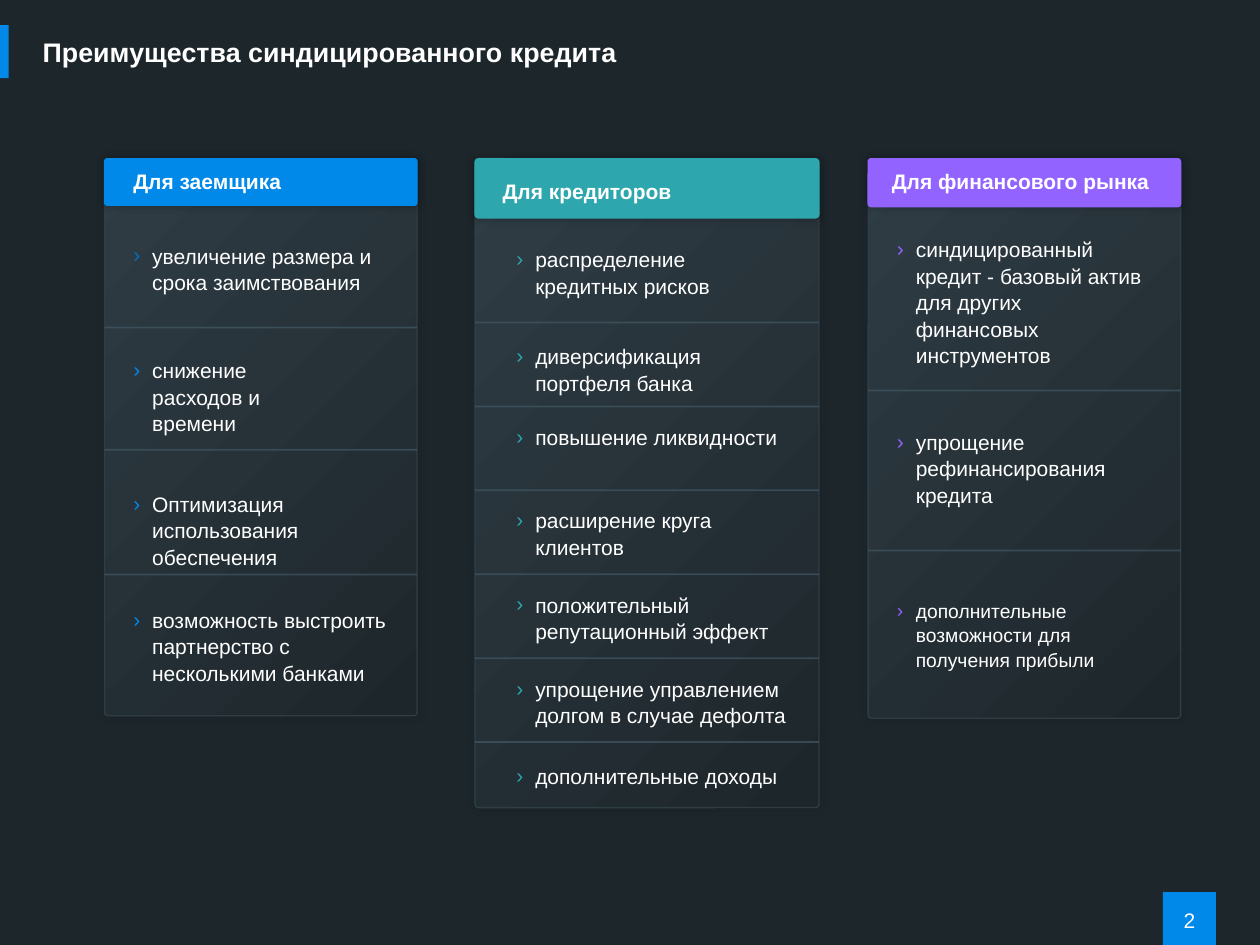
from lxml import etree
from pptx import Presentation
from pptx.dml.color import RGBColor
from pptx.enum.shapes import MSO_CONNECTOR as Connector, MSO_SHAPE as Shape
from pptx.enum.text import MSO_ANCHOR as Anchor, PP_ALIGN as Align
from pptx.oxml.ns import qn
from pptx.util import Inches, Pt

NIGHT = RGBColor(0x1D, 0x26, 0x2B)
SLATE = RGBColor(0x2F, 0x3D, 0x45)
STEEL = RGBColor(0x49, 0x60, 0x6C)
WHITE = RGBColor(0xFF, 0xFF, 0xFF)
BLUE = RGBColor(0x00, 0x89, 0xE9)
DEEP_BLUE = RGBColor(0x00, 0x70, 0xC0)
TEAL = RGBColor(0x2D, 0xA7, 0xAD)
VIOLET = RGBColor(0x92, 0x63, 0xFF)
COLUMNS, ROWS = 100, 75

BORROWER = [
    (18.7, 5, 22.3, DEEP_BLUE, 12, "увеличение размера и срока заимствования"),
    (27.8, 7.1, 16.9, BLUE, 12, "снижение расходов и времени"),
    (38.4, 7.1, 22.3, BLUE, 12, "Оптимизация использования обеспечения"),
    (47.6, 7.1, 22.3, BLUE, 12,
     "возможность выстроить партнерство с несколькими банками"),
]
LENDERS = [
    (top, 5, 23.6, TEAL, 12, text) for top, text in [
        (19, "распределение кредитных рисков"),
        (26.7, "диверсификация портфеля банка"),
        (33.1, "повышение ликвидности"),
        (39.7, "расширение круга клиентов"),
        (46.4, "положительный репутационный эффект"),
        (53.1, "упрощение управлением долгом в случае дефолта"),
        (60, "дополнительные доходы"),
    ]
]
MARKET = [
    (18.2, 11.1, 21.5, VIOLET, 12,
     "синдицированный кредит - базовый актив для других финансовых инструментов"),
    (33.5, 7.1, 21.5, VIOLET, 12, "упрощение рефинансирования кредита"),
    (47, 6.6, 21.5, VIOLET, 11, "дополнительные возможности для получения прибыли"),
]


def write(frame, text, size=12, bold=False, align=Align.LEFT, bullet=None, spacing=1.0):
    """Fill a text frame with one formatted paragraph."""
    paragraph = frame.paragraphs[0]
    paragraph.text = text
    paragraph.alignment = align
    paragraph.line_spacing = spacing
    if bullet is not None:
        properties = paragraph._p.get_or_add_pPr()
        properties.set("marL", str(Inches(0.15)))
        properties.set("indent", str(-Inches(0.15)))
        colour = etree.SubElement(properties, qn("a:buClr"))
        etree.SubElement(colour, qn("a:srgbClr"), val=str(bullet))
        etree.SubElement(properties, qn("a:buFont"), typeface="Arial")
        etree.SubElement(properties, qn("a:buChar"), char="›")
    font = paragraph.runs[0].font
    font.name, font.size, font.bold = "Arial", Pt(size), bold
    font.color.rgb = WHITE


class Deck:
    """Holds the slide style and draws each kind of element on the grid."""

    def __init__(self):
        self.presentation = Presentation()
        self.presentation.slide_width = Inches(10)
        self.presentation.slide_height = Inches(7.5)
        self.column = self.presentation.slide_width / COLUMNS
        self.row = self.presentation.slide_height / ROWS
        self.slide = self.presentation.slides.add_slide(self.presentation.slide_layouts[6])
        self.slide.background.fill.solid()
        self.slide.background.fill.fore_color.rgb = NIGHT

    def place(self, left, top, width, height):
        return (round(left * self.column), round(top * self.row),
                round(width * self.column), round(height * self.row))

    def block(self, area, colour):
        block = self.slide.shapes.add_shape(Shape.RECTANGLE, *self.place(*area))
        block.shadow.inherit = False
        block.fill.solid()
        block.fill.fore_color.rgb = colour
        block.line.fill.background()

    def card(self, area, corner, shade, colour=None):
        card = self.slide.shapes.add_shape(Shape.ROUNDED_RECTANGLE, *self.place(*area))
        card.adjustments[0] = corner
        if colour is None:
            card.fill.gradient()
            card.fill.gradient_angle = 315
            for stop, tone in zip(card.fill.gradient_stops, (SLATE, NIGHT)):
                stop.color.rgb = tone
        else:
            card.fill.solid()
            card.fill.fore_color.rgb = colour
        card.line.color.rgb = colour or SLATE
        card.line.width = Pt(0.75)
        card.shadow.inherit = False
        effects = card._element.spPr.find(qn("a:effectLst"))
        shadow = etree.SubElement(effects, qn("a:outerShdw"), blurRad=str(Pt(5)),
                                  dist="0", dir="0", algn="ctr", rotWithShape="0")
        black = etree.SubElement(shadow, qn("a:srgbClr"), val="000000")
        etree.SubElement(black, qn("a:alpha"), val=str(shade * 1000))

    def divider(self, left, top, width):
        x, y, length, _ = self.place(left, top, width, 0)
        divider = self.slide.shapes.add_connector(Connector.STRAIGHT, x, y, x + length, y)
        divider.line.color.rgb = STEEL
        divider.line.width = Pt(1)
        properties = divider._element.spPr
        tone = properties.find(".//" + qn("a:srgbClr"))
        etree.SubElement(tone, qn("a:alpha"), val="59000")
        etree.SubElement(properties, qn("a:effectLst"))

    def text(self, area, text, anchor=Anchor.TOP, **style):
        frame = self.slide.shapes.add_textbox(*self.place(*area)).text_frame
        frame.word_wrap = True
        frame.vertical_anchor = anchor
        write(frame, text, **style)

    def benefits(self, panel, header, heading, colour, dividers, item_left, items):
        left, _, width, _ = panel
        heading_area, title = heading
        self.card(panel, 0.01, 10)
        self.card((left, 12.6, width, header), 0.06, 25, colour)
        self.text(heading_area, title, anchor=Anchor.MIDDLE, bold=True)
        for top in dividers:
            self.divider(left, top, width)
        for top, height, span, bullet, size, wording in items:
            self.text((item_left, top, span, height), wording,
                      size=size, bullet=bullet, spacing=1.05)


def main():
    deck = Deck()
    deck.block((92.3, 70.8, 4.2, 4.2), BLUE)
    deck.block((0, 2, 0.7, 4.2), BLUE)
    deck.text((2.4, 1.1, 86.3, 6), "Преимущества синдицированного кредита",
              anchor=Anchor.MIDDLE, size=15.3, bold=True)
    deck.benefits((68.9, 12.6, 24.8, 44.4), 3.8,
                  ((69.8, 12.9, 24.4, 3), "Для финансового рынка"),
                  VIOLET, (31, 43.7), 70.2, MARKET)
    deck.benefits((8.3, 12.6, 24.8, 44.2), 3.7,
                  ((9.6, 12.9, 21.4, 3), "Для заемщика"),
                  BLUE, (26, 35.7, 45.6), 9.6, BORROWER)
    deck.benefits((37.7, 13, 27.3, 51.1), 4.7,
                  ((38.9, 13.4, 22.1, 3.5), "Для кредиторов"),
                  TEAL, [25.6 + 6.66 * step for step in range(6)], 40, LENDERS)
    deck.text((89.7, 71.5, 9.4, 2.7), "2", align=Align.CENTER)
    deck.presentation.save("out.pptx")


if __name__ == "__main__":
    main()
